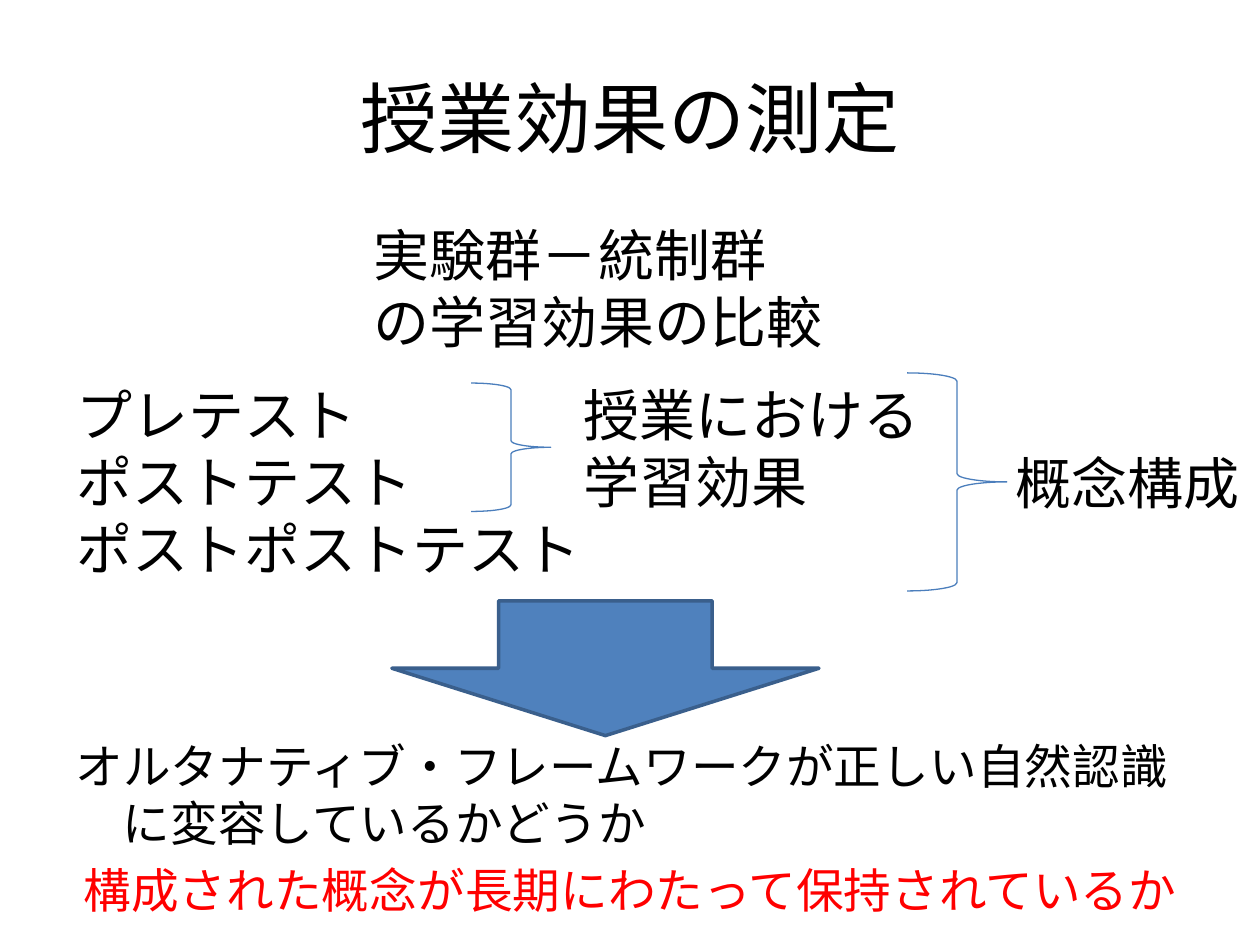
from lxml.etree import SubElement
from pptx import Presentation
from pptx.dml.color import RGBColor
from pptx.enum.shapes import MSO_SHAPE
from pptx.enum.text import MSO_ANCHOR, MSO_AUTO_SIZE, PP_ALIGN
from pptx.oxml.ns import qn
from pptx.util import Pt

COLORS = {
    "text": "000000",
    "emphasis": "FF0000",
    "brace": "4B7EBC",
    "arrow": "4F81BD",
    "arrow_edge": "3A5F8C",
}
FONT = "Calibri"


def color(name):
    return RGBColor.from_string(COLORS[name])


def write(paragraph, text, size=32, ink="text", align=None):
    run = paragraph.add_run()
    run.text = text
    run.font.name = FONT
    run.font.size = Pt(size)
    run.font.color.rgb = color(ink)
    paragraph.alignment = align


def paragraphs(frame, count):
    for _ in range(count - 1):
        frame.add_paragraph()
    return frame.paragraphs


def place(placeholder, left, top, width, height):
    placeholder.left, placeholder.top = Pt(left), Pt(top)
    placeholder.width, placeholder.height = Pt(width), Pt(height)
    placeholder.text_frame.auto_size = MSO_AUTO_SIZE.NONE
    return placeholder.text_frame


def add_title(slide, text):
    frame = place(slide.shapes.title, 36, 21.6, 648, 90)
    frame.vertical_anchor = MSO_ANCHOR.MIDDLE
    write(frame.paragraphs[0], text, size=44, align=PP_ALIGN.CENTER)


def add_conclusions(slide, conclusions):
    frame = place(slide.placeholders[1], 36, 417.6, 648, 110.2)
    entries = zip(paragraphs(frame, len(conclusions)), conclusions)
    for paragraph, (text, style) in entries:
        write(paragraph, text, size=27.2, **style)
        SubElement(paragraph._p.get_or_add_pPr(), qn("a:buNone"))


def add_label(slide, lines, left, top, width, height, wrap=True):
    label = slide.shapes.add_textbox(Pt(left), Pt(top), Pt(width), Pt(height))
    frame = label.text_frame
    frame.word_wrap = wrap
    frame.auto_size = MSO_AUTO_SIZE.SHAPE_TO_FIT_TEXT
    for paragraph, line in zip(paragraphs(frame, len(lines)), lines):
        write(paragraph, line)


def add_figure(slide, preset, left, top, width, height, edge, weight, fill=None):
    figure = slide.shapes.add_shape(
        preset, Pt(left), Pt(top), Pt(width), Pt(height))
    figure.shadow.inherit = False
    figure.line.color.rgb = color(edge)
    figure.line.width = Pt(weight)
    if fill:
        figure.fill.solid()
        figure.fill.fore_color.rgb = color(fill)
    else:
        figure.fill.background()


def add_brace(slide, left, top, width, height):
    add_figure(slide, MSO_SHAPE.RIGHT_BRACE, left, top, width, height,
               "brace", 0.75)


def main():
    deck = Presentation()
    deck.slide_width, deck.slide_height = Pt(720), Pt(540)
    slide = deck.slides.add_slide(deck.slide_layouts[1])

    add_title(slide, "授業効果の測定")
    add_conclusions(slide, [
        ("オルタナティブ・フレームワークが正しい自然認識に変容しているかどうか", {}),
        ("構成された概念が長期にわたって保持されているか",
         {"ink": "emphasis", "align": PP_ALIGN.CENTER}),
    ])
    add_label(slide, ["実験群－統制群", "の学習効果の比較"], 206.6, 122.4, 273, 85)
    add_label(slide, ["プレテスト", "ポストテスト", "ポストポストテスト"],
              36.7, 213.8, 442, 123.8)
    add_brace(slide, 269.3, 218.9, 45.4, 73.4)
    add_label(slide, ["授業における", "学習効果"], 326.2, 213.8, 293.8, 85)
    add_label(slide, ["概念構成"], 573.1, 252.7, 144, 46, wrap=False)
    add_brace(slide, 518.4, 213.1, 56.9, 124.6)
    add_figure(slide, MSO_SHAPE.DOWN_ARROW, 223.9, 343.4, 244.1, 77,
               "arrow_edge", 2, fill="arrow")

    deck.save("out.pptx")


if __name__ == "__main__":
    main()
